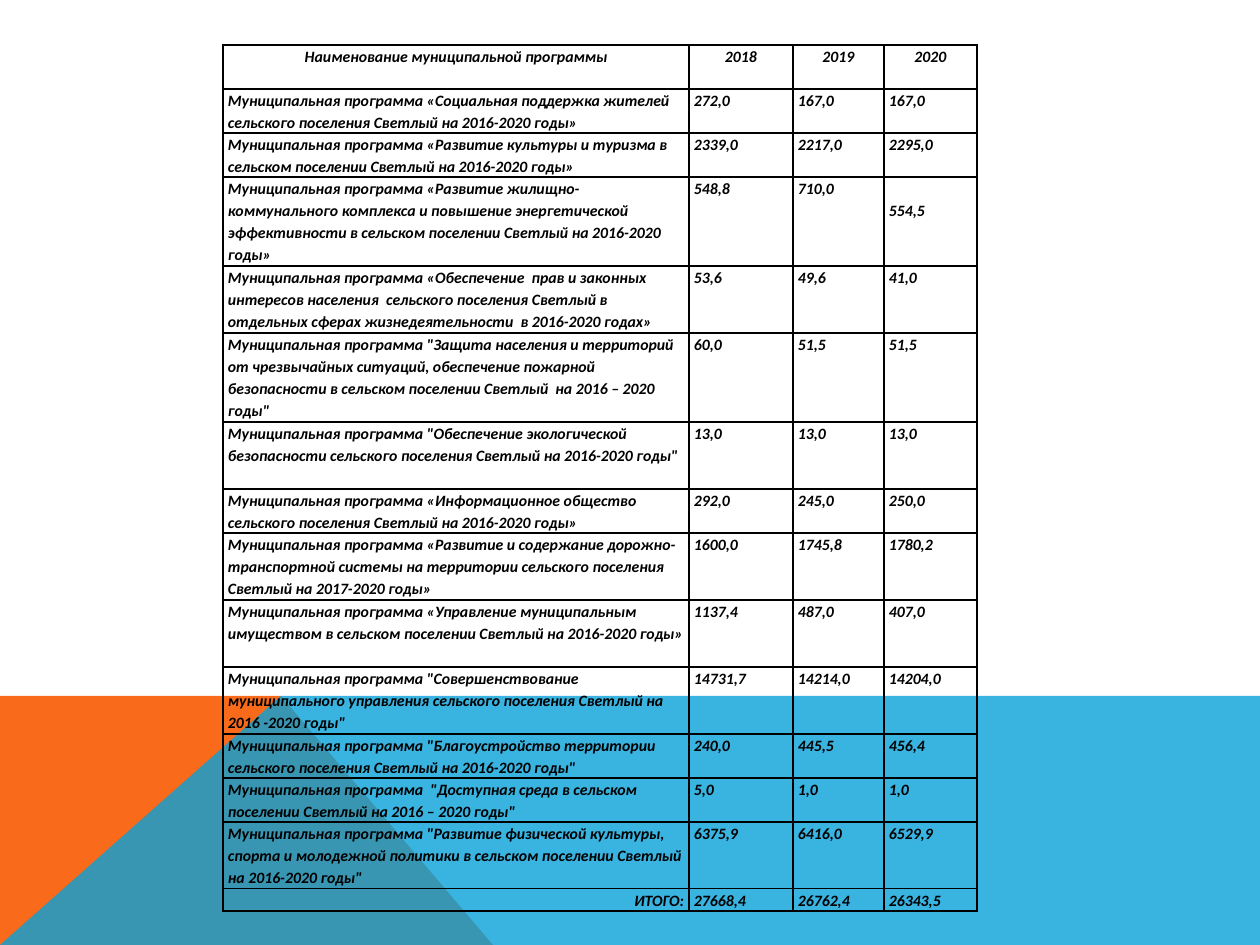
from lxml import etree
from pptx import Presentation
from pptx.dml.color import RGBColor
from pptx.enum.text import PP_ALIGN
from pptx.oxml.ns import qn
from pptx.util import Pt

LEFT, CENTER, RIGHT = PP_ALIGN.LEFT, PP_ALIGN.CENTER, PP_ALIGN.RIGHT
EMU_PER_PX = 914400 / 126
LINE_PX = 22.2
BORDER_SIDES = ("a:lnL", "a:lnR", "a:lnT", "a:lnB")

HEADER = ("Наименование муниципальной программы", "2018", "2019", "2020")
TOTAL = ("ИТОГО:", "27668,4", "26762,4", "26343,5")
PROGRAMS = [
    (2, "Муниципальная программа «Социальная поддержка жителей сельского поселения "
        "Светлый на 2016-2020 годы»", "272,0", "167,0", "167,0"),
    (2, "Муниципальная программа «Развитие культуры и туризма в сельском поселении "
        "Светлый на 2016-2020 годы»", "2339,0", "2217,0", "2295,0"),
    (4, "Муниципальная программа «Развитие жилищно-коммунального комплекса и повышение "
        "энергетической эффективности в сельском поселении Светлый на 2016-2020 годы»",
     "548,8", "710,0", "554,5"),
    (3, "Муниципальная программа «Обеспечение  прав и законных интересов населения  "
        "сельского поселения Светлый в отдельных сферах жизнедеятельности  "
        "в 2016-2020 годах»", "53,6", "49,6", "41,0"),
    (4, "Муниципальная программа \"Защита населения и территорий от чрезвычайных ситуаций, "
        "обеспечение пожарной безопасности в сельском поселении Светлый  "
        "на 2016 – 2020 годы\"", "60,0", "51,5", "51,5"),
    (3, "Муниципальная программа \"Обеспечение экологической безопасности сельского "
        "поселения Светлый на 2016-2020 годы\"", "13,0", "13,0", "13,0"),
    (2, "Муниципальная программа «Информационное общество сельского поселения "
        "Светлый на 2016-2020 годы»", "292,0", "245,0", "250,0"),
    (3, "Муниципальная программа «Развитие и содержание дорожно-транспортной системы "
        "на территории сельского поселения Светлый на 2017-2020 годы»",
     "1600,0", "1745,8", "1780,2"),
    (3, "Муниципальная программа «Управление муниципальным имуществом в сельском "
        "поселении Светлый на 2016-2020 годы»", "1137,4", "487,0", "407,0"),
    (3, "Муниципальная программа \"Совершенствование муниципального управления сельского "
        "поселения Светлый на 2016 -2020 годы\"", "14731,7", "14214,0", "14204,0"),
    (2, "Муниципальная программа \"Благоустройство территории сельского поселения "
        "Светлый на 2016-2020 годы\"", "240,0", "445,5", "456,4"),
    (2, "Муниципальная программа  \"Доступная среда в сельском поселении "
        "Светлый на 2016 – 2020 годы\"", "5,0", "1,0", "1,0"),
    (3, "Муниципальная программа \"Развитие физической культуры, спорта и молодежной "
        "политики в сельском поселении Светлый на 2016-2020 годы\"",
     "6375,9", "6416,0", "6529,9"),
]


def px(length):
    return round(length * EMU_PER_PX)


def rgb(code):
    return RGBColor.from_string(code)


class SlideBuilder:
    """Holds the text and border style and draws elements on the current slide."""

    font, size, spacing, ink = "Calibri", 9, 1.15, "000000"
    border_pt = 1

    def __init__(self, slide):
        self.slide = slide

    def polygon(self, points, color, opacity=100):
        start, *others = points
        builder = self.slide.shapes.build_freeform(*start, scale=EMU_PER_PX)
        builder.add_line_segments(others, close=True)
        area = builder.convert_to_shape()
        area.shadow.inherit = False
        area.line.fill.background()
        area.fill.solid()
        area.fill.fore_color.rgb = rgb(color)
        if opacity < 100:
            tint = area._element.spPr.find(qn("a:solidFill")).find(qn("a:srgbClr"))
            etree.SubElement(tint, qn("a:alpha"), val=str(opacity * 1000))

    def table(self, left, top, widths, heights):
        frame = self.slide.shapes.add_table(
            len(heights), len(widths), px(left), px(top), px(sum(widths)), px(sum(heights)))
        grid = frame.table
        grid.first_row = grid.horz_banding = False
        for column, width in zip(grid.columns, widths):
            column.width = px(width)
        for row, height in zip(grid.rows, heights):
            row.height = px(height)
        return grid

    def cell(self, cell, text, align=LEFT, top=0):
        cell.margin_left = cell.margin_right = px(5)
        cell.margin_top, cell.margin_bottom = px(top), 0
        self.borders(cell)
        cell.fill.background()
        paragraph = cell.text_frame.paragraphs[0]
        paragraph.alignment = align
        paragraph.line_spacing = self.spacing
        run = paragraph.add_run()
        run.text = text
        run.font.name, run.font.size = self.font, Pt(self.size)
        run.font.bold = run.font.italic = True
        run.font.color.rgb = rgb(self.ink)

    def borders(self, cell):
        properties = cell._tc.get_or_add_tcPr()
        for side in BORDER_SIDES:
            line = etree.SubElement(properties, qn(side), w=str(Pt(self.border_pt)))
            fill = etree.SubElement(line, qn("a:solidFill"))
            etree.SubElement(fill, qn("a:srgbClr"), val=self.ink)


def main():
    deck = Presentation()
    deck.slide_width, deck.slide_height = px(1260), px(945)
    builder = SlideBuilder(deck.slides.add_slide(deck.slide_layouts[6]))

    builder.polygon([(0, 945), (0, 696), (281, 696), (493, 945)], "F96A1B")
    builder.polygon([(0, 945), (281, 696), (1260, 696), (1260, 945)], "08A1D9", 80)

    line_counts = [2, *(program[0] for program in PROGRAMS), 1]
    heights = [round(count * LINE_PX) for count in line_counts]
    budget = builder.table(223, 45, [466, 104, 91, 93], heights)

    rows = [HEADER, *(program[1:] for program in PROGRAMS), TOTAL]
    for r, values in enumerate(rows):
        for c, value in enumerate(values):
            align = CENTER if values is HEADER else LEFT
            if value == "ИТОГО:":
                align = RIGHT
            lowered = value == "554,5"
            builder.cell(budget.cell(r, c), value, align, 22 if lowered else 0)

    deck.save("out.pptx")


if __name__ == "__main__":
    main()
